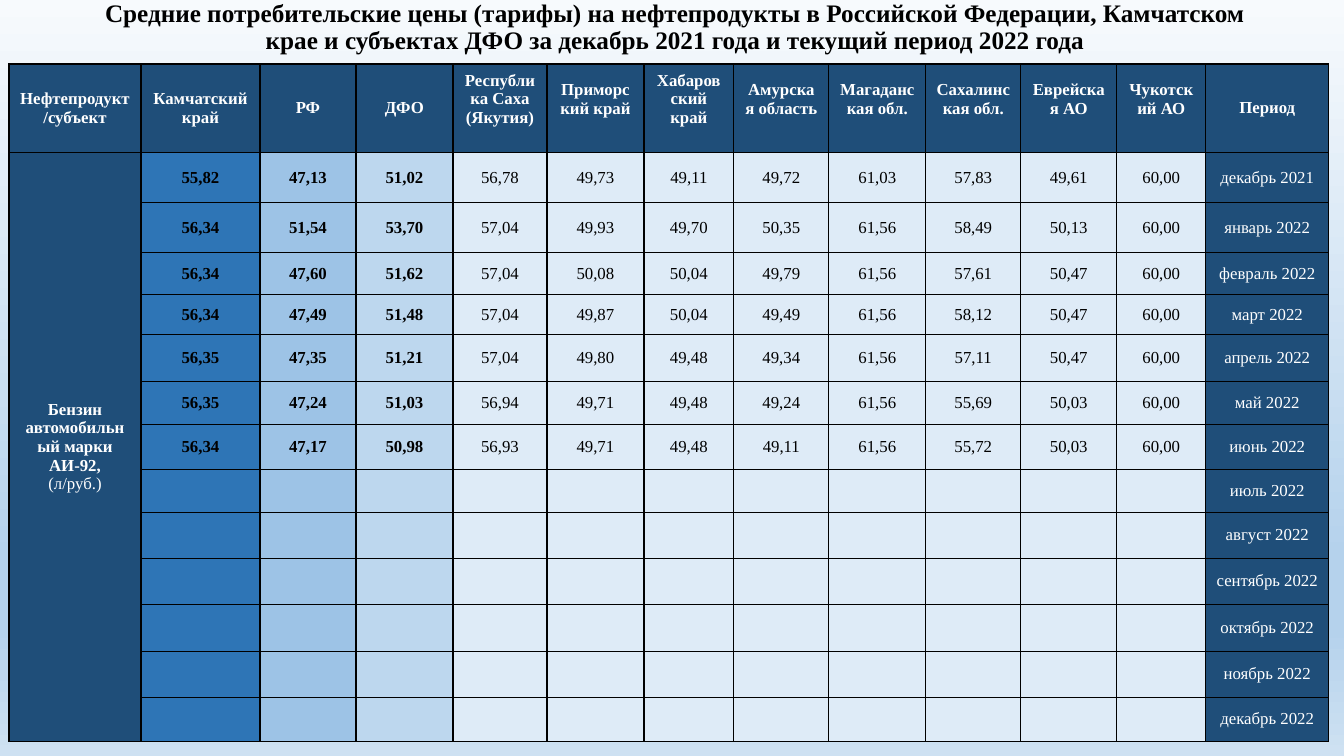
"""Build a slide with a table of monthly petrol prices by region."""
from lxml import etree
from pptx import Presentation
from pptx.dml.color import RGBColor
from pptx.enum.text import MSO_ANCHOR, PP_ALIGN
from pptx.oxml.ns import qn
from pptx.util import Pt

MID = MSO_ANCHOR.MIDDLE
CENTER = PP_ALIGN.CENTER

TITLE = ("Средние потребительские цены (тарифы) на нефтепродукты в Российской Федерации, "
         "Камчатском крае и субъектах ДФО за декабрь 2021 года и текущий период 2022 года")
HEADS = ["Нефтепродукт/субъект", "Камчатский край", "РФ", "ДФО", "Республика Саха (Якутия)",
         "Приморский край", "Хабаровский край", "Амурская область", "Магаданская обл.",
         "Сахалинская обл.", "Еврейская АО", "Чукотский АО", "Период"]
FUEL = ["Бензин автомобильный марки", "АИ-92,", "(л/руб.)"]
PRICES = [
    ("декабрь 2021", "55,82 47,13 51,02 56,78 49,73 49,11 49,72 61,03 57,83 49,61 60,00"),
    ("январь 2022", "56,34 51,54 53,70 57,04 49,93 49,70 50,35 61,56 58,49 50,13 60,00"),
    ("февраль 2022", "56,34 47,60 51,62 57,04 50,08 50,04 49,79 61,56 57,61 50,47 60,00"),
    ("март 2022", "56,34 47,49 51,48 57,04 49,87 50,04 49,49 61,56 58,12 50,47 60,00"),
    ("апрель 2022", "56,35 47,35 51,21 57,04 49,80 49,48 49,34 61,56 57,11 50,47 60,00"),
    ("май 2022", "56,35 47,24 51,03 56,94 49,71 49,48 49,24 61,56 55,69 50,03 60,00"),
    ("июнь 2022", "56,34 47,17 50,98 56,93 49,71 49,48 49,11 61,56 55,72 50,03 60,00"),
    ("июль 2022", ""),
    ("август 2022", ""),
    ("сентябрь 2022", ""),
    ("октябрь 2022", ""),
    ("ноябрь 2022", ""),
    ("декабрь 2022", ""),
]

THEME = {
    "font": "Times New Roman", "title": 18, "body": 12, "line": 1,
    "black": "000000", "white": "FFFFFF", "dark": "1F4E79",
    "lead": ["2E75B6", "9DC3E6", "BDD7EE"], "pale": "DEEBF7",
    "sky": [(0, "F7FAFD"), (74, "B5D2EC"), (83, "B5D2EC"), (100, "CEE1F2")],
}

WIDE, HIGH = 1344, 756
TITLE_BOX = (93, 0, 1164, 55)
LEFT, TOP = 9, 64
COLS = [132, 119, 96, 97, 94, 97, 90, 95, 97, 95, 96, 89, 123]
ROWS = [85, 50, 50, 42, 40, 47, 43, 45, 43, 46, 46, 47, 46, 44]
RAISE = 23
RAISED = range(4, 12)


def px(n):
    return round(n * 914400 / 100.8)


def style(para, size, color, bold):
    para.alignment = CENTER
    for run in para.runs:
        font = run.font
        font.name, font.size, font.bold = THEME["font"], Pt(size), bold
        font.color.rgb = RGBColor.from_string(color)


def paint_sky(slide):
    fill = slide.background.fill
    fill.gradient()
    fill.gradient_angle = 270
    stops = slide.element.find(".//" + qn("a:gsLst"))
    stops.clear()
    for pos, color in THEME["sky"]:
        stop = etree.SubElement(stops, qn("a:gs"), pos=str(pos * 1000))
        etree.SubElement(stop, qn("a:srgbClr"), val=color)


def frame(cell):
    props = cell._tc.get_or_add_tcPr()
    for i, side in enumerate("LRTB"):
        line = etree.Element(qn("a:ln" + side), w=str(Pt(THEME["line"])))
        fill = etree.SubElement(line, qn("a:solidFill"))
        etree.SubElement(fill, qn("a:srgbClr"), val=THEME["black"])
        props.insert(i, line)


def put(cell, text, fill, color, bold):
    cell.fill.solid()
    cell.fill.fore_color.rgb = RGBColor.from_string(fill)
    cell.vertical_anchor = MID
    frame(cell)
    if text:
        cell.text_frame.text = text
    for para in cell.text_frame.paragraphs:
        style(para, THEME["body"], color, bold)


def add_title(slide):
    text = slide.shapes.add_textbox(*map(px, TITLE_BOX)).text_frame
    text.word_wrap = True
    text.margin_top = text.margin_bottom = 0
    text.vertical_anchor = MID
    text.text = TITLE
    para = text.paragraphs[0]
    para.line_spacing = 0.9
    style(para, THEME["title"], THEME["black"], True)


def add_prices(slide):
    shape = slide.shapes.add_table(len(ROWS), len(COLS), px(LEFT), px(TOP),
                                   px(sum(COLS)), px(sum(ROWS)))
    table = shape.table
    table.first_row = table.horz_banding = False
    for col, wide in zip(table.columns, COLS):
        col.width = px(wide)
    for row, high in zip(table.rows, ROWS):
        row.height = px(high)

    dark, white, black = THEME["dark"], THEME["white"], THEME["black"]
    for c, head in enumerate(HEADS):
        cell = table.cell(0, c)
        put(cell, head, dark, white, True)
        if c in RAISED:
            cell.margin_bottom = px(RAISE)

    last = len(COLS) - 1
    lead = THEME["lead"]
    fills = lead + [THEME["pale"]] * (last - 1 - len(lead))
    for r, (month, prices) in enumerate(PRICES, 1):
        put(table.cell(r, 0), "\n".join(FUEL) if r == 1 else "", dark, white, True)
        values = prices.split() or [""] * len(fills)
        for c, (value, fill) in enumerate(zip(values, fills), 1):
            put(table.cell(r, c), value, fill, black, c <= len(lead))
        put(table.cell(r, last), month, dark, white, False)

    fuel = table.cell(1, 0)
    fuel.merge(table.cell(len(PRICES), 0))
    style(fuel.text_frame.paragraphs[-1], THEME["body"], white, False)


def main():
    deck = Presentation()
    deck.slide_width, deck.slide_height = px(WIDE), px(HIGH)
    slide = deck.slides.add_slide(deck.slide_layouts[6])
    paint_sky(slide)
    add_title(slide)
    add_prices(slide)
    deck.save("out.pptx")


if __name__ == "__main__":
    main()
